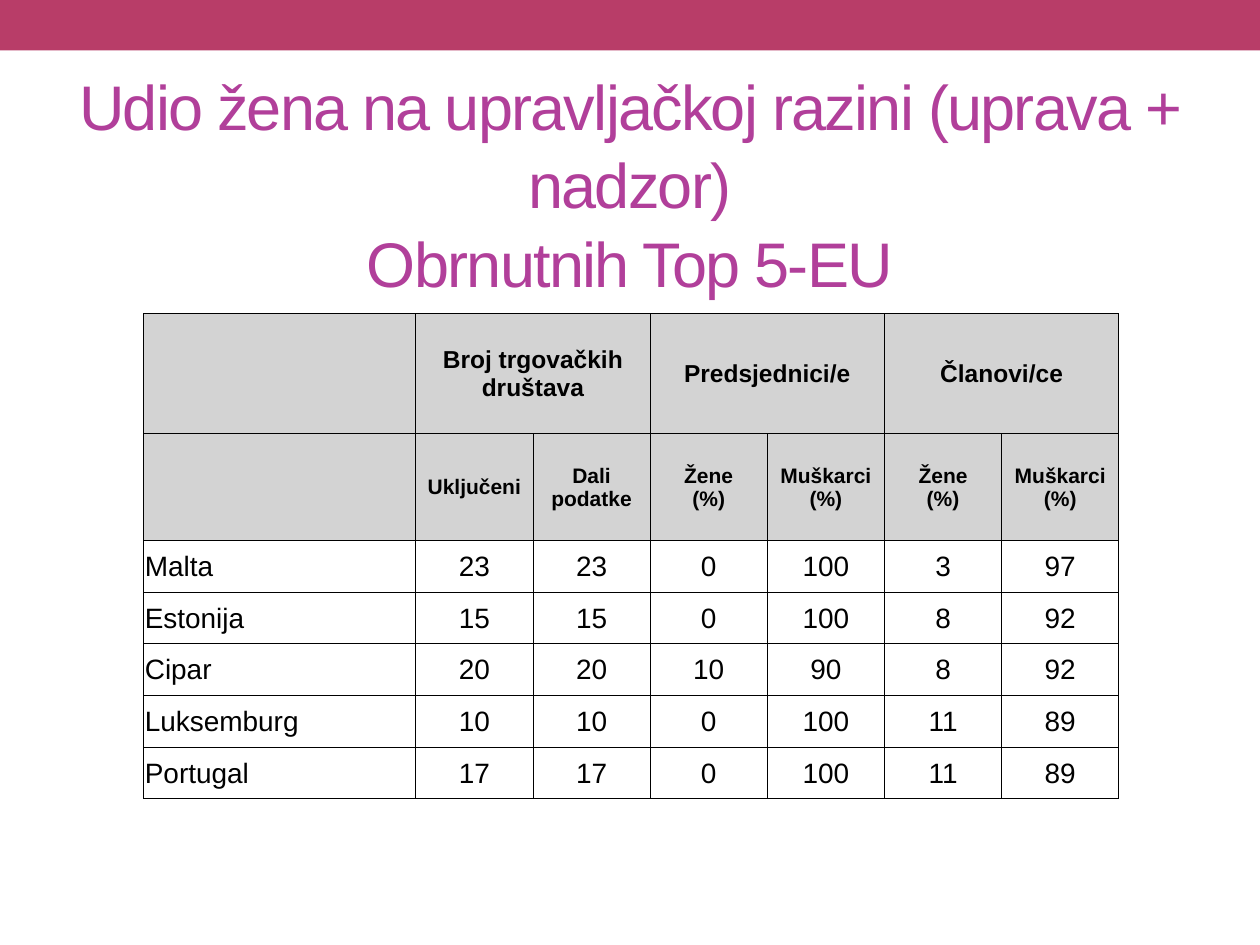
"""Build a slide with a table of the lowest shares of women in management in the EU."""
from lxml import etree
from pptx import Presentation
from pptx.dml.color import RGBColor
from pptx.enum.shapes import MSO_SHAPE
from pptx.enum.text import MSO_ANCHOR, MSO_AUTO_SIZE, PP_ALIGN
from pptx.oxml.ns import qn
from pptx.util import Inches, Pt

RECTANGLE = MSO_SHAPE.RECTANGLE
MIDDLE = MSO_ANCHOR.MIDDLE
NO_AUTOFIT = MSO_AUTO_SIZE.NONE
LEFT, CENTER = PP_ALIGN.LEFT, PP_ALIGN.CENTER

TITLE = "Udio žena na upravljačkoj razini (uprava + nadzor)\vObrnutnih Top 5-EU"
GROUPS = ["Broj trgovačkih društava", "Predsjednici/e", "Članovi/ce"]
SHARES = ["Žene\v(%)", "Muškarci\v(%)"]
COUNTRIES = [
    ("Malta", 23, 23, 0, 100, 3, 97),
    ("Estonija", 15, 15, 0, 100, 8, 92),
    ("Cipar", 20, 20, 10, 90, 8, 92),
    ("Luksemburg", 10, 10, 0, 100, 11, 89),
    ("Portugal", 17, 17, 0, 100, 11, 89),
]
GROUP_ROW = [""] + [text for group in GROUPS for text in (group, "")]
ROWS = [GROUP_ROW, ["", "Uključeni", "Dali podatke"] + SHARES * 2] + COUNTRIES
COLUMN_WIDTHS = [2.16] + [0.93] * 6
ROW_HEIGHTS = [0.95, 0.85] + [0.41] * len(COUNTRIES)
HEADER_SIZES = [14, 12]
BODY_SIZE = 16
CELL_FORMAT = {
    "vertical_anchor": MIDDLE,
    "margin_left": Inches(0.01),
    "margin_right": Inches(0.01),
    "margin_top": Inches(0.01),
    "margin_bottom": 0,
}
TITLE_FORMAT = {
    "vertical_anchor": MIDDLE,
    "auto_size": NO_AUTOFIT,
    "word_wrap": True,
    "margin_top": Inches(0.7),
}


def color(code):
    return RGBColor.from_string(code)


def apply(target, values):
    for name, value in values.items():
        setattr(target, name, value)


def fill_with(target, code):
    target.fill.solid()
    target.fill.fore_color.rgb = color(code)


def style_font(font, size, code, bold=False):
    apply(font, {"name": "Arial", "size": Pt(size), "bold": bold})
    font.color.rgb = color(code)


def add_borders(cell, code, width):
    properties = cell._tc.get_or_add_tcPr()
    for position, side in enumerate(("lnL", "lnR", "lnT", "lnB")):
        line = etree.Element(qn(f"a:{side}"), w=str(Pt(width)))
        solid = etree.SubElement(line, qn("a:solidFill"))
        etree.SubElement(solid, qn("a:srgbClr"), val=code)
        properties.insert(position, line)


def add_title(slide):
    title = slide.shapes.title
    apply(title, {"left": Inches(0.5), "top": Inches(0.58),
                  "width": Inches(9), "height": Inches(1.08)})
    frame = title.text_frame
    frame.text = TITLE
    apply(frame, TITLE_FORMAT)
    para = frame.paragraphs[0]
    apply(para, {"alignment": CENTER, "line_spacing": 1.04})
    for span in para.runs:
        style_font(span.font, 36, "B13F9A")
        span.font._element.set("spc", "-100")


def format_cell(cell, row, column, value):
    header = row < len(HEADER_SIZES)
    cell.text = str(value)
    apply(cell, CELL_FORMAT)
    para = cell.text_frame.paragraphs[0]
    para.alignment = CENTER if column else LEFT
    size = HEADER_SIZES[row] if header else BODY_SIZE
    for span in para.runs:
        style_font(span.font, size, "000000", header)
    if header:
        fill_with(cell, "D3D3D3")
    else:
        cell.fill.background()
    add_borders(cell, "000000", 0.5)


def add_share_table(slide):
    frame = slide.shapes.add_table(
        len(ROWS), len(COLUMN_WIDTHS), Inches(1.14), Inches(2.49),
        Inches(sum(COLUMN_WIDTHS)), Inches(sum(ROW_HEIGHTS)))
    table = frame.table
    apply(table, {"first_row": False, "horz_banding": False})
    for column, width in zip(table.columns, COLUMN_WIDTHS):
        column.width = Inches(width)
    for row, height in zip(table.rows, ROW_HEIGHTS):
        row.height = Inches(height)
    for row, values in enumerate(ROWS):
        for column, value in enumerate(values):
            format_cell(table.cell(row, column), row, column, value)
    for column in range(1, len(COLUMN_WIDTHS), 2):
        table.cell(0, column).merge(table.cell(0, column + 1))


def main():
    deck = Presentation()
    apply(deck, {"slide_width": Inches(10), "slide_height": Inches(7.5)})
    slide = deck.slides.add_slide(deck.slide_layouts[5])
    band = slide.shapes.add_shape(RECTANGLE, 0, 0, Inches(10), Inches(0.4))
    band.shadow.inherit = False
    fill_with(band, "B83D68")
    band.line.fill.background()
    add_title(slide)
    add_share_table(slide)
    deck.save("out.pptx")


if __name__ == "__main__":
    main()
